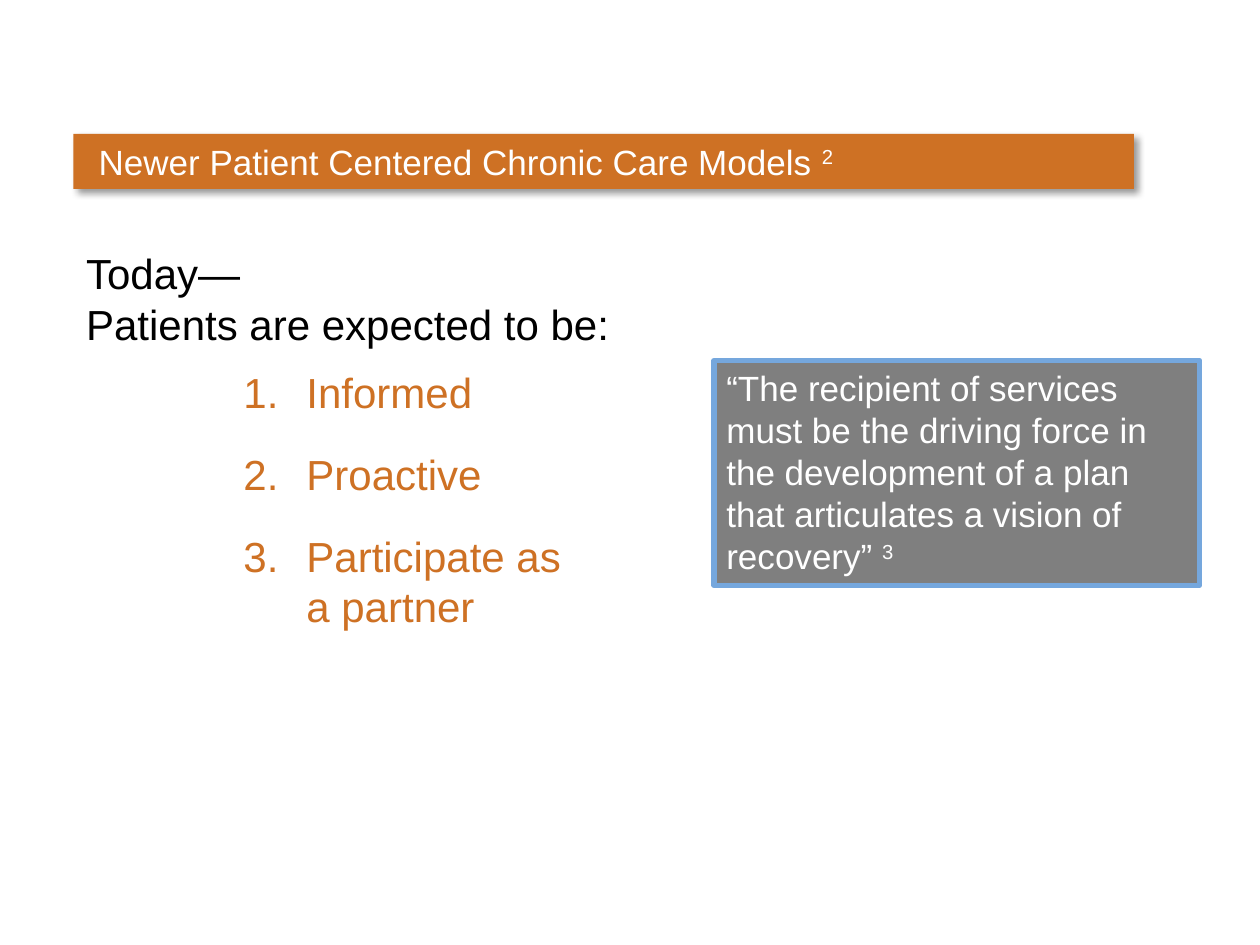
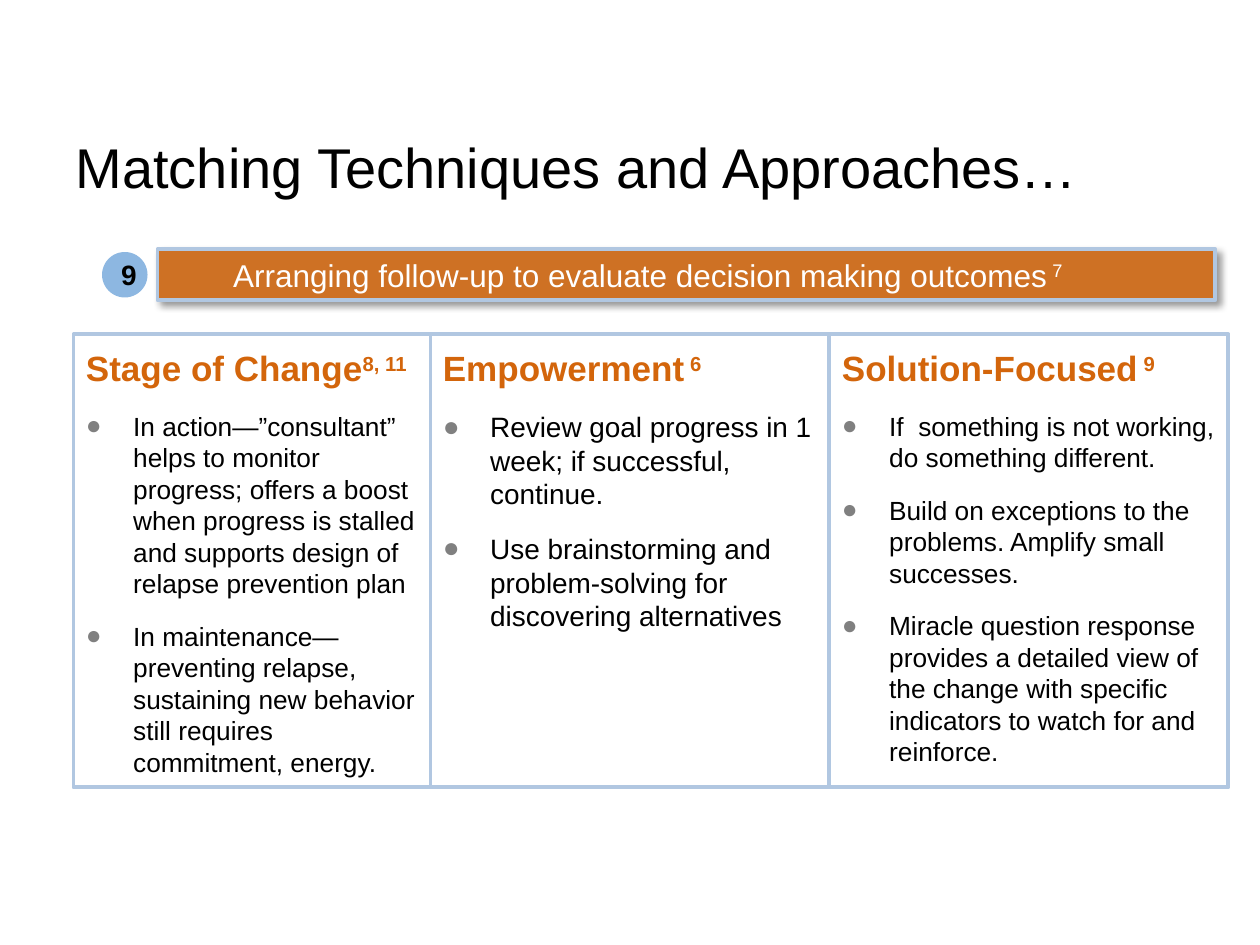
import pptx
import pptx.dml.color
import pptx.enum.shapes
import pptx.enum.text
import pptx.oxml
import pptx.oxml.ns
import pptx.util
from lxml import etree

Pt = pptx.util.Pt
RGBColor = pptx.dml.color.RGBColor
Shape = pptx.enum.shapes.MSO_SHAPE
Align = pptx.enum.text.PP_ALIGN
Anchor = pptx.enum.text.MSO_ANCHOR
qn = pptx.oxml.ns.qn

ORANGE = RGBColor(0xCE, 0x71, 0x24)
HEADING_ORANGE = RGBColor(0xD3, 0x65, 0x0B)
GRAY = RGBColor(0x7F, 0x7F, 0x7F)
BULLET_GRAY = RGBColor(0x80, 0x80, 0x80)
QUOTE_BLUE = RGBColor(0x75, 0xA7, 0xDD)
BORDER_BLUE = RGBColor(0xB1, 0xC7, 0xE1)
BADGE_BLUE = RGBColor(0x8D, 0xB7, 0xE1)
WHITE = RGBColor(0xFF, 0xFF, 0xFF)
BLACK = RGBColor(0, 0, 0)

FONT = "Arial"
LEFT_EDGE = 42
SHADOW = (
    '<a:outerShdw xmlns:a="http://schemas.openxmlformats.org/drawingml/2006/main" '
    f'blurRad="{Pt(4)}" dist="{Pt(3)}" dir="2700000" algn="tl" rotWithShape="0">'
    '<a:srgbClr val="000000"><a:alpha val="40000"/></a:srgbClr></a:outerShdw>'
)


def set_indent(para, margin, first_line):
    properties = para._p.get_or_add_pPr()
    properties.set("marL", str(Pt(margin)))
    properties.set("indent", str(Pt(first_line)))


def add_bullet(para, tag, color=None, **attributes):
    properties = para._p.get_or_add_pPr()
    if color is not None:
        holder = etree.SubElement(properties, qn("a:buClr"))
        etree.SubElement(holder, qn("a:srgbClr"), val=str(color))
    etree.SubElement(properties, qn("a:buFont"), typeface=FONT)
    etree.SubElement(properties, qn(tag), **attributes)


def write(para, text, superscript="", size=20, color=WHITE, bold=False,
          align=Align.LEFT, space_before=0):
    """Fill a paragraph; newlines become line breaks, the superscript follows."""
    para.alignment = align
    para.line_spacing = 1.0
    para.space_before = Pt(space_before)

    def add_span(content):
        span = para.add_run()
        span.text = content
        span.font.name = FONT
        span.font.size = Pt(size)
        span.font.bold = bold
        span.font.color.rgb = color
        return span

    for number, line in enumerate(text.split("\n")):
        if number:
            para.add_line_break()
        add_span(line)
    if superscript:
        add_span(superscript).font._element.set("baseline", "30000")


class DeckBuilder:
    def __init__(self):
        self.deck = pptx.Presentation()
        self.deck.slide_width = Pt(720)
        self.deck.slide_height = Pt(540)
        self.page = None

    def add_page(self, title, left, top, width, height, size):
        self.page = self.deck.slides.add_slide(self.deck.slide_layouts[5])
        box = self.page.shapes.title
        box.left, box.top, box.width, box.height = map(Pt, (left, top, width, height))
        frame = box.text_frame
        frame.word_wrap = True
        frame.auto_size = pptx.enum.text.MSO_AUTO_SIZE.NONE
        frame.vertical_anchor = Anchor.TOP
        write(frame.paragraphs[0], title, size=size, color=BLACK)

    def shape(self, left, top, width, height, fill=None, line=None, line_width=2.25,
              kind=Shape.RECTANGLE, anchor=Anchor.TOP, shadow=False):
        box = self.page.shapes.add_shape(kind, *map(Pt, (left, top, width, height)))
        box.shadow.inherit = False
        if fill is None:
            box.fill.background()
        else:
            box.fill.solid()
            box.fill.fore_color.rgb = fill
        if line is None:
            box.line.fill.background()
        else:
            box.line.color.rgb = line
            box.line.width = Pt(line_width)
        if shadow:
            effects = box._element.spPr.find(qn("a:effectLst"))
            effects.append(pptx.oxml.parse_xml(SHADOW))
        box.text_frame.word_wrap = True
        box.text_frame.vertical_anchor = anchor
        return box

    def band(self, left, top, width, height, text, superscript, size, text_inset,
             line=None):
        box = self.shape(left, top, width, height, fill=ORANGE, line=line, shadow=True)
        box.text_frame.margin_left = Pt(text_inset)
        write(box.text_frame.paragraphs[0], text, superscript, size=size)

    def numbered_list(self, left, top, width, height, items):
        box = self.page.shapes.add_textbox(*map(Pt, (left, top, width, height)))
        frame = box.text_frame
        frame.word_wrap = True
        for number, item in enumerate(items):
            para = frame.add_paragraph() if number else frame.paragraphs[0]
            set_indent(para, 36, -36)
            add_bullet(para, "a:buAutoNum", type="arabicPeriod")
            write(para, item, size=24, color=ORANGE, space_before=18 if number else 0)

    def approach_column(self, left, width, heading, superscript, size, points):
        box = self.shape(left, 191, width, 259, line=BORDER_BLUE)
        frame = box.text_frame
        frame.margin_top = Pt(7.2)
        write(frame.paragraphs[0], heading, superscript, color=HEADING_ORANGE, bold=True)
        for point in points:
            para = frame.add_paragraph()
            set_indent(para, 27, -27)
            add_bullet(para, "a:buChar", BULLET_GRAY, char="●")
            write(para, point, size=size, color=BLACK, space_before=12)


def build_care_models(builder):
    builder.add_page("Today—\nPatients are expected to be:",
                     LEFT_EDGE, 138, 420, 66, size=24)
    builder.numbered_list(132, 206, 204, 160,
                          ["Informed", "Proactive", "Participate as a partner"])
    quote = builder.shape(408, 206, 277.5, 128.5, fill=GRAY, line=QUOTE_BLUE,
                          line_width=3)
    write(quote.text_frame.paragraphs[0],
          "“The recipient of services must be the driving force in the development "
          "of a plan that articulates a vision of recovery” ", "3")
    builder.band(LEFT_EDGE, 76.5, 606, 31.5,
                 "Newer Patient Centered Chronic Care Models ", "2",
                 size=20, text_inset=14.4)


def build_techniques(builder):
    builder.add_page("Matching Techniques and Approaches…", 36, 72, 660, 48, size=32)
    builder.band(90, 142.5, 604.5, 29,
                 "Arranging follow-up to evaluate decision making outcomes", " 7",
                 size=18, text_inset=43.2, line=BORDER_BLUE)
    badge = builder.shape(58.3, 144, 26, 26, fill=BADGE_BLUE, kind=Shape.OVAL,
                          anchor=Anchor.MIDDLE)
    write(badge.text_frame.paragraphs[0], "9", size=16, color=BLACK, bold=True,
          align=Align.CENTER)

    columns = [
        (204, "Stage of Change", "8, 11", 15, [
            "In action—”consultant” helps to monitor progress; offers a boost when "
            "progress is stalled and supports design of relapse prevention plan",
            "In maintenance—preventing relapse, sustaining new behavior still "
            "requires commitment, energy."]),
        (228, "Empowerment", " 6", 16, [
            "Review goal progress in 1 week; if successful, continue.",
            "Use brainstorming and problem-solving for discovering alternatives"]),
        (228, "Solution-Focused", " 9", 15, [
            "If  something is not working, do something different.",
            "Build on exceptions to the problems. Amplify small successes.",
            "Miracle question response provides a detailed view of the change with "
            "specific indicators to watch for and reinforce."]),
    ]
    left = LEFT_EDGE
    for width, heading, superscript, size, points in columns:
        builder.approach_column(left, width, heading, superscript, size, points)
        left += width


def main():
    builder = DeckBuilder()
    build_care_models(builder)
    build_techniques(builder)
    builder.deck.save("out.pptx")


if __name__ == "__main__":
    main()
